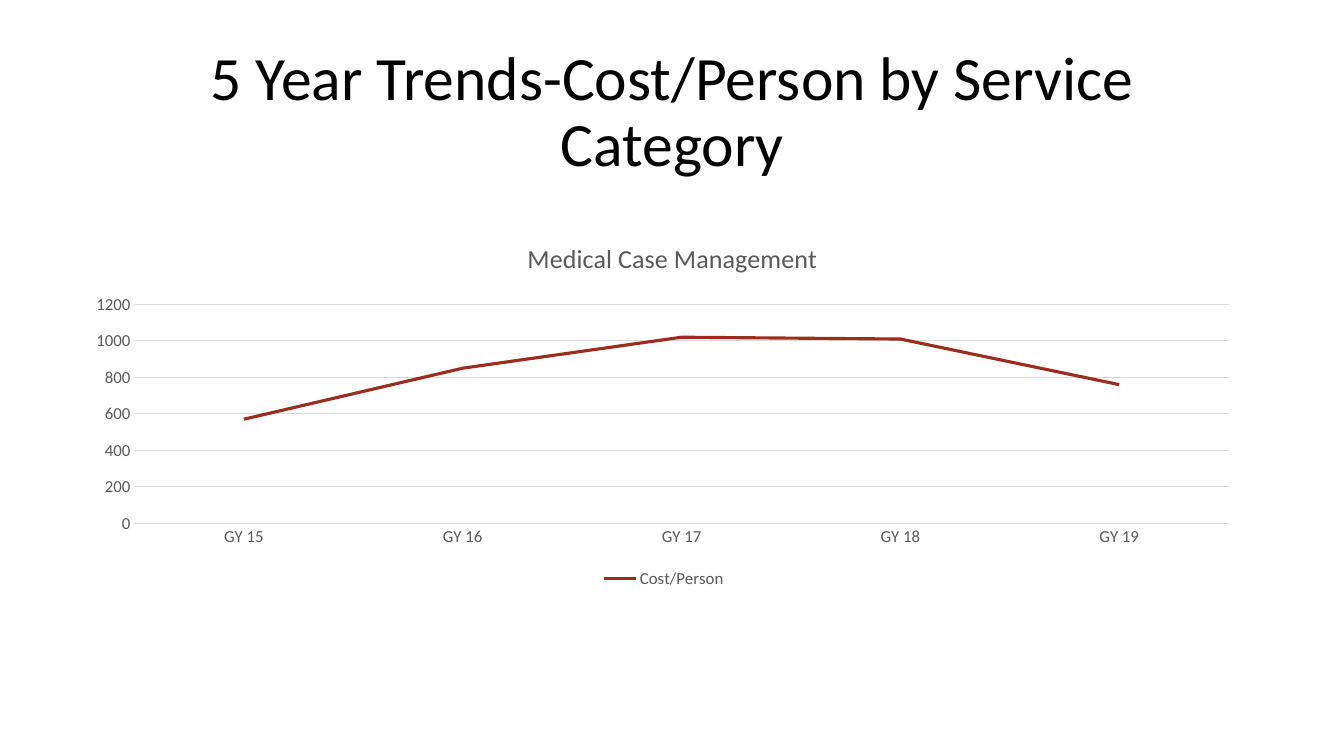
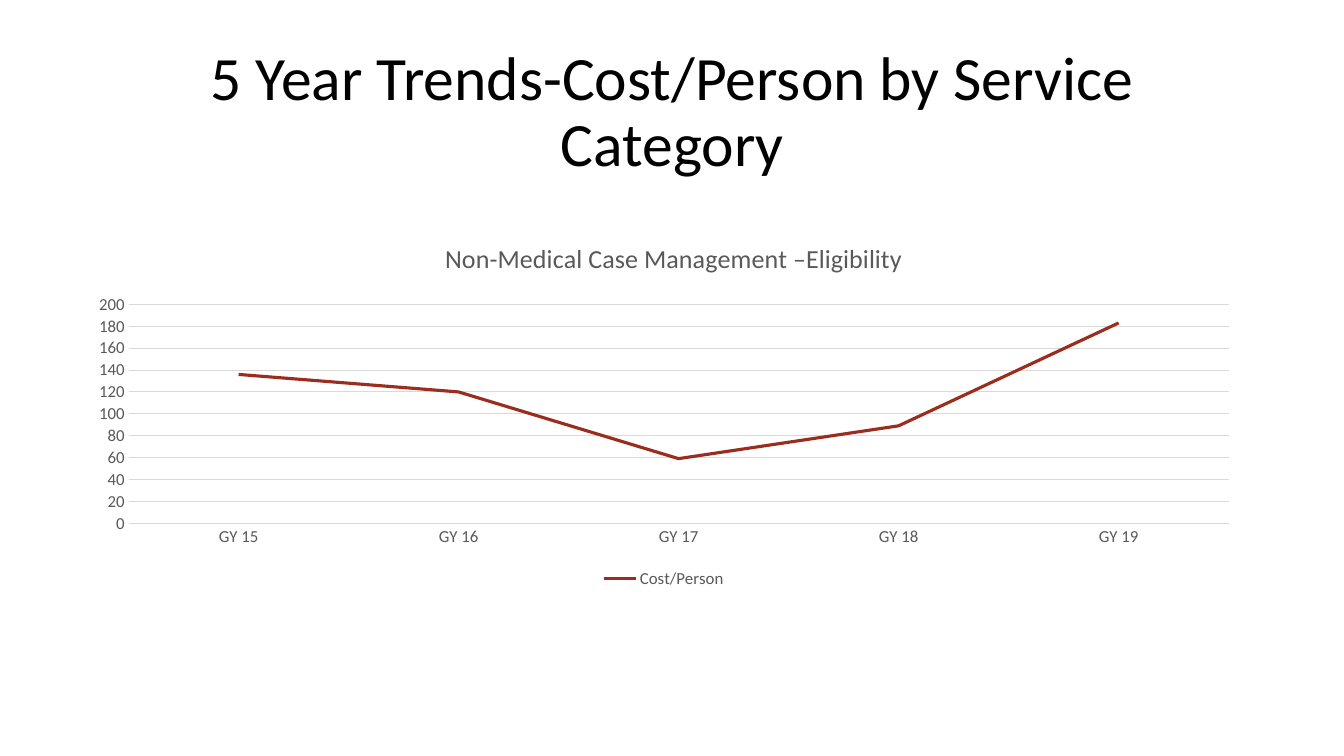
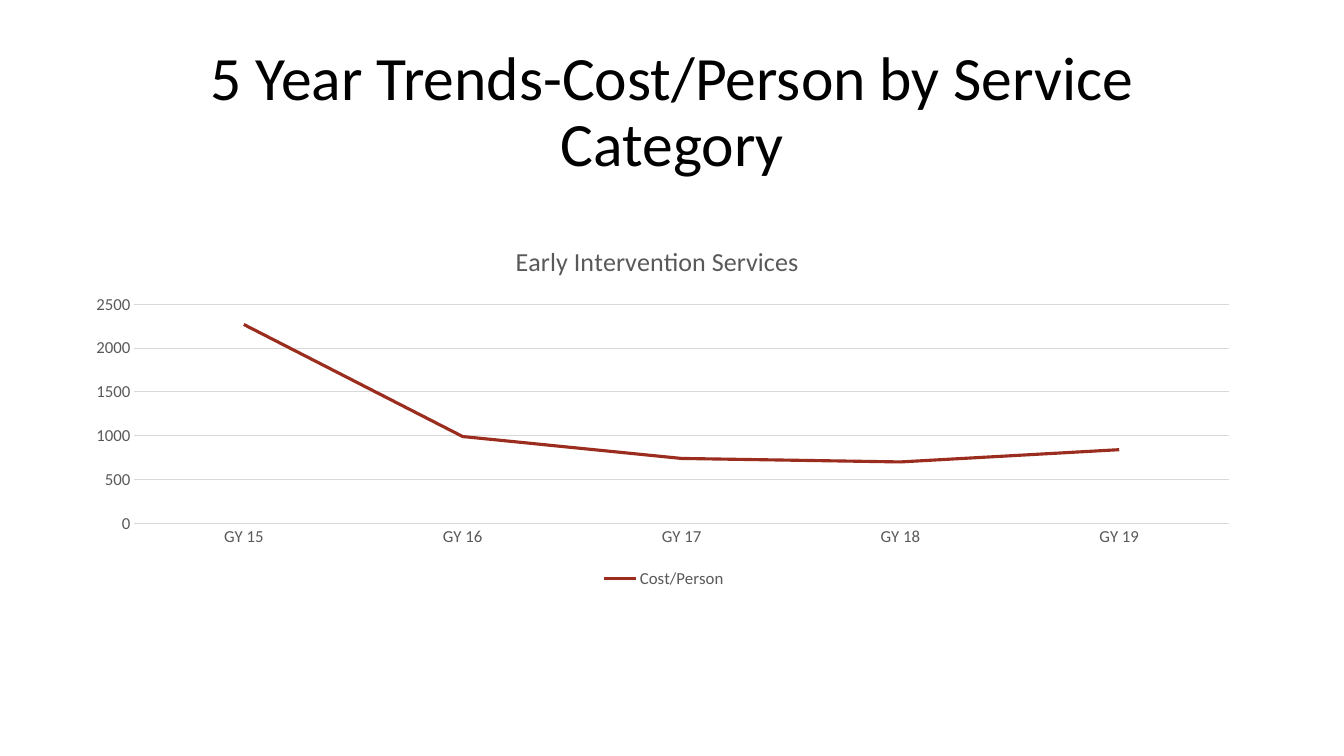
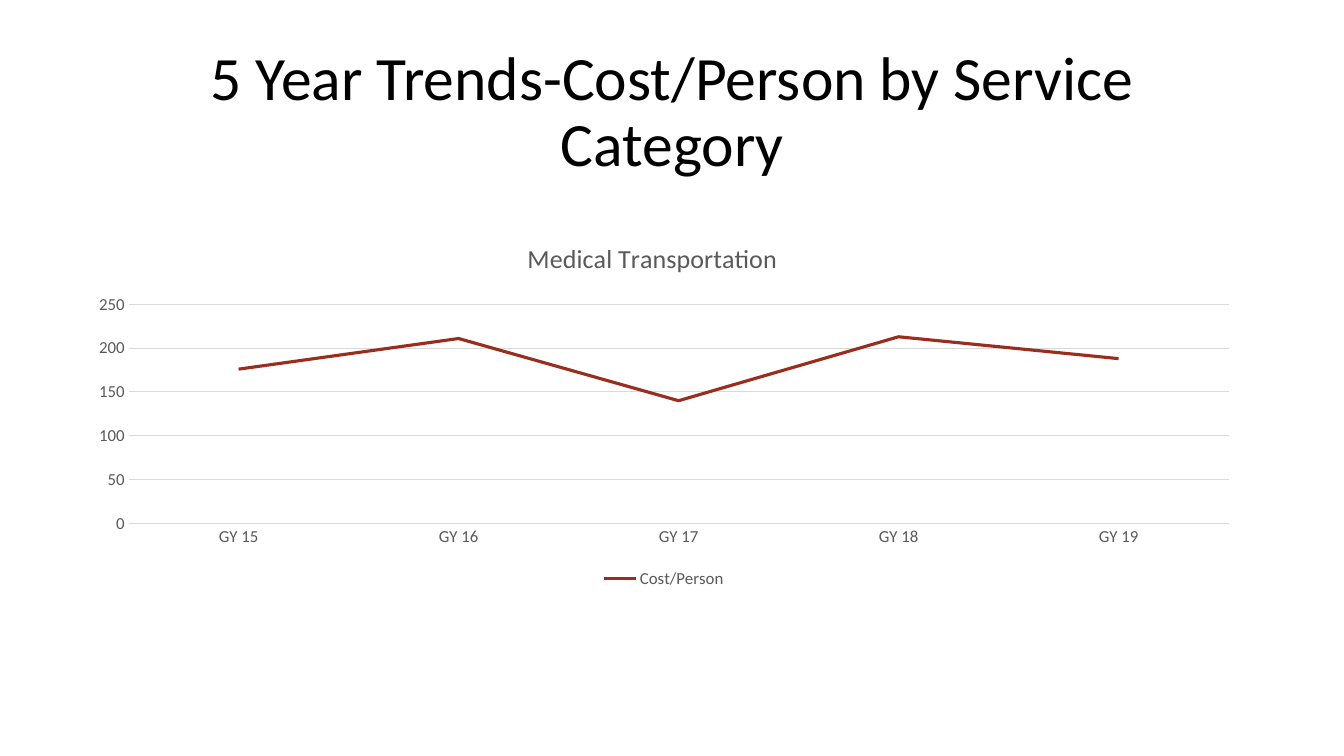
import pptx
import pptx.util
import pptx.chart.data
import pptx.dml.color
import pptx.enum.chart
import pptx.enum.text
import pptx.oxml
import pptx.oxml.ns

Inches = pptx.util.Inches
Pt = pptx.util.Pt
qn = pptx.oxml.ns.qn

FONT = "Calibri"
COLORS = {"title": "000000", "label": "595959", "grid": "D9D9D9", "cost": "9B2D1F"}
TITLE = "5 Year Trends-Cost/Person by Service Category"
YEARS = [f"GY {year}" for year in range(15, 20)]
CHARTS = [
    ("Medical Case Management", (570, 850, 1020, 1010, 760), (0.38, 0.02), 0.05, 1200, 200),
    ("Non-Medical Case Management –Eligibility", (136, 120, 59, 89, 183), (0.31, 0.02), 0.045, 200, 20),
    ("Early Intervention Services", (2270, 990, 740, 700, 840), (0.37, 0.03), 0.05, 2500, 500),
    ("Medical Transportation", (176, 211, 140, 213, 188), (0.38, 0.02), 0.045, 250, 50),
]
PLOT_RIGHT, PLOT_TOP, PLOT_HEIGHT = 0.98, 0.21, 0.6


def rgb(name):
    return pptx.dml.color.RGBColor.from_string(COLORS[name])


def add_text(tf, text, size, color, align=None, spacing=None):
    p = tf.paragraphs[0]
    p.alignment = align
    p.line_spacing = spacing
    r = p.add_run()
    r.text = text
    r.font.name = FONT
    r.font.size = Pt(size)
    r.font.bold = False
    r.font.color.rgb = rgb(color)


prs = pptx.Presentation()
prs.slide_width = Inches(13.33)
prs.slide_height = Inches(7.5)

layout = prs.slide_layouts[5]
sp = layout.placeholders[0]
sp.left, sp.top, sp.width, sp.height = map(Inches, (0.92, 0.4, 11.5, 1.45))
sp.text_frame.vertical_anchor = pptx.enum.text.MSO_ANCHOR.MIDDLE
sp.text_frame.auto_size = pptx.enum.text.MSO_AUTO_SIZE.NONE

for name, values, (title_x, title_y), plot_left, top_value, step in CHARTS:
    s = prs.slides.add_slide(layout)
    add_text(s.shapes.title.text_frame, TITLE, 44, "title",
             align=pptx.enum.text.PP_ALIGN.CENTER, spacing=0.9)

    data = pptx.chart.data.CategoryChartData()
    data.categories = YEARS
    data.add_series("Cost/Person", values)
    chart = s.shapes.add_chart(
        pptx.enum.chart.XL_CHART_TYPE.LINE,
        Inches(0.75), Inches(2.26), Inches(11.67), Inches(3.62), data).chart
    chart.font.name = FONT
    chart.font.size = Pt(12)
    chart.font.color.rgb = rgb("label")

    chart.has_title = True
    add_text(chart.chart_title.text_frame, name, 18.6, "label")

    chart.has_legend = True
    chart.legend.position = pptx.enum.chart.XL_LEGEND_POSITION.BOTTOM
    chart.legend.include_in_layout = False

    for axis in (chart.category_axis, chart.value_axis):
        axis.major_tick_mark = pptx.enum.chart.XL_TICK_MARK.NONE
        axis.minor_tick_mark = pptx.enum.chart.XL_TICK_MARK.NONE
    chart.value_axis.minimum_scale = 0
    chart.value_axis.maximum_scale = top_value
    chart.value_axis.major_unit = step
    chart.value_axis.has_major_gridlines = True
    chart.value_axis.format.line.fill.background()
    for lined in (chart.category_axis, chart.value_axis.major_gridlines):
        lined.format.line.color.rgb = rgb("grid")
        lined.format.line.width = Pt(0.75)

    plot = chart.plots[0]
    plot.vary_by_categories = False
    series = plot.series[0]
    series.smooth = False
    series.marker.style = pptx.enum.chart.XL_MARKER_STYLE.NONE
    series.format.line.color.rgb = rgb("cost")
    series.format.line.width = Pt(2.25)

    title = chart.chart_title.element
    plot_area = chart.element.find(".//" + qn("c:plotArea"))
    title_place = {"xMode": "edge", "yMode": "edge", "x": title_x, "y": title_y}
    plot_place = {"layoutTarget": "inner", "xMode": "edge", "yMode": "edge",
                  "x": plot_left, "y": PLOT_TOP,
                  "w": round(PLOT_RIGHT - plot_left, 3), "h": PLOT_HEIGHT}
    for parent, index, place in ((title, 1, title_place), (plot_area, 0, plot_place)):
        for old in parent.findall(qn("c:layout")):
            parent.remove(old)
        items = "".join(f'<c:{key} val="{value}"/>' for key, value in place.items())
        parent.insert(index, pptx.oxml.parse_xml(
            f'<c:layout {pptx.oxml.ns.nsdecls("c")}><c:manualLayout>{items}</c:manualLayout></c:layout>'))

prs.save("out.pptx")
